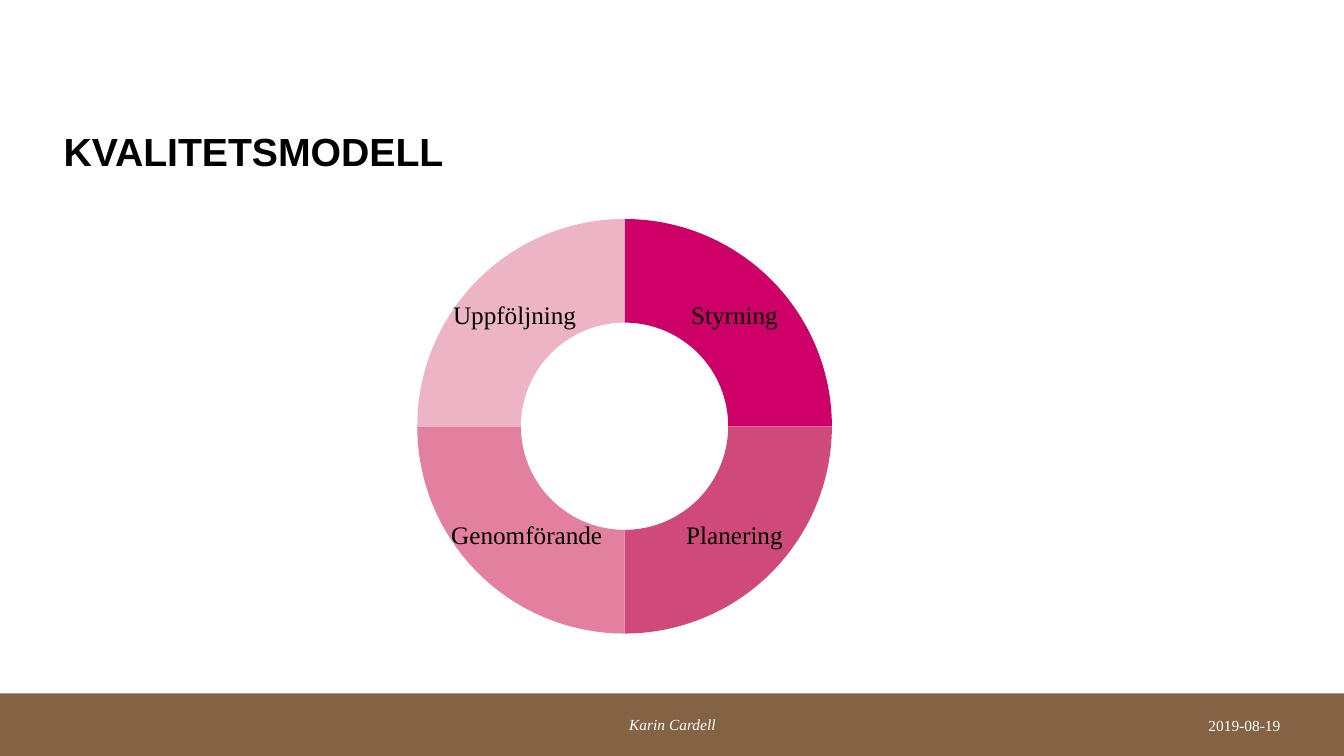
from dataclasses import dataclass

import lxml.etree
import pptx
import pptx.chart.data
import pptx.dml.color
import pptx.enum.chart
import pptx.enum.shapes
import pptx.enum.text
import pptx.oxml
import pptx.util
from pptx.util import Inches

SERIF = "Times New Roman"
CHART_NS = "http://schemas.openxmlformats.org/drawingml/2006/chart"
ALIGN = pptx.enum.text.PP_ALIGN
ANCHOR = pptx.enum.text.MSO_ANCHOR


@dataclass
class Phase:
    category: str
    label: str
    color: str
    shift: float = 0


@dataclass
class FooterText:
    text: str
    left: float
    top: float
    width: float
    height: float
    align: ALIGN
    italic: bool = False


PHASES = [
    Phase("1:a kvart", "Styrning", "CC0066"),
    Phase("2:a kvart", "Planering", "CF4A7B"),
    Phase("3:e kvart", "Genomförande", "E37F9F", 0.01),
    Phase("4:e kvart", "Uppföljning", "ECB4C4"),
]
FOOTER = [
    FooterText("Karin Cardell", 3.15, 7.06, 7.04, 0.25, ALIGN.CENTER, True),
    FooterText("2019-08-19", 11.51, 7.08, 1.19, 0.24, ALIGN.RIGHT),
]


def rgb(color: str) -> pptx.dml.color.RGBColor:
    return pptx.dml.color.RGBColor.from_string(color)


def set_font(font, name: str, size: float, color: str) -> None:
    font.name = name
    font.size = pptx.util.Pt(size)
    font.color.rgb = rgb(color)


def clear_margins(tf) -> None:
    tf.margin_left = tf.margin_top = tf.margin_right = tf.margin_bottom = 0
    tf.word_wrap = True


def layout_xml(**values):
    parts = "".join(f'<c:{tag} val="{val}"/>' for tag, val in values.items())
    return pptx.oxml.parse_xml(
        f'<c:layout xmlns:c="{CHART_NS}"><c:manualLayout>{parts}'
        "</c:manualLayout></c:layout>")


def add_title(s, text: str) -> None:
    sp = s.shapes.title
    sp.left, sp.top = Inches(0.63), Inches(0.64)
    sp.width, sp.height = Inches(12.08), Inches(1.1)
    tf = sp.text_frame
    clear_margins(tf)
    tf.vertical_anchor = ANCHOR.BOTTOM
    p = tf.paragraphs[0]
    p.text = text
    p.alignment = ALIGN.LEFT
    p.line_spacing = 0.9
    set_font(p.font, "Arial", 28, "000000")
    p.font.bold = True


def add_doughnut(s) -> None:
    data = pptx.chart.data.CategoryChartData()
    data.categories = [phase.category for phase in PHASES]
    data.add_series("Series 1", [4] * len(PHASES))
    chart = s.shapes.add_chart(
        pptx.enum.chart.XL_CHART_TYPE.DOUGHNUT, Inches(0.62), Inches(2),
        Inches(12.08), Inches(4.55), data).chart
    chart.has_legend = False
    chart.has_title = False
    set_font(chart.font, SERIF, 18, "000000")

    # Plot area and hole
    plot = chart.plots[0]
    plot.has_data_labels = False
    plot_area = plot._element.getparent()
    for old in plot_area.findall(f"{{{CHART_NS}}}layout"):
        plot_area.remove(old)
    plot_area.insert(0, layout_xml(
        layoutTarget="inner", xMode="edge", yMode="edge",
        x=0.285, y=0.038, w=0.353, h=0.904))
    for hole in plot_area.iter(f"{{{CHART_NS}}}holeSize"):
        hole.set("val", "41")

    # Ring segments with their names
    series = plot.series[0]
    series.data_labels.show_value = True
    series.data_labels.show_category_name = True
    for i, phase in enumerate(PHASES):
        point = series.points[i]
        point.format.fill.solid()
        point.format.fill.fore_color.rgb = rgb(phase.color)
        point.format.line.fill.background()
        p = point.data_label.text_frame.paragraphs[0]
        r = p.add_run()
        r.text = phase.label
        set_font(r.font, SERIF, 18, "000000")

    # Each label stands for value and category, some moved sideways
    for label in series._element.iter(f"{{{CHART_NS}}}dLbl"):
        label.find(f"{{{CHART_NS}}}showCatName").set("val", "1")
        idx = label.find(f"{{{CHART_NS}}}idx")
        shift = PHASES[int(idx.get("val"))].shift
        if shift:
            idx.addnext(layout_xml(x=shift, y=0))


def add_footer_text(s, item: FooterText) -> None:
    tf = s.shapes.add_textbox(
        Inches(item.left), Inches(item.top),
        Inches(item.width), Inches(item.height)).text_frame
    clear_margins(tf)
    tf.vertical_anchor = ANCHOR.MIDDLE
    p = tf.paragraphs[0]
    p.text = item.text
    p.alignment = item.align
    set_font(p.font, SERIF, 11, "FFFFFF")
    p.font.italic = item.italic


def main() -> None:
    prs = pptx.Presentation()
    prs.slide_width, prs.slide_height = Inches(13.33), Inches(7.5)
    s = prs.slides.add_slide(prs.slide_layouts[5])

    # Footer band
    band = s.shapes.add_shape(
        pptx.enum.shapes.MSO_SHAPE.RECTANGLE, 0, Inches(6.88),
        prs.slide_width, Inches(0.62))
    band.shadow.inherit = False
    band.fill.solid()
    band.fill.fore_color.rgb = rgb("836344")
    band.line.fill.background()

    # Content
    add_doughnut(s)
    add_title(s, "KVALITETSMODELL")
    for item in FOOTER:
        add_footer_text(s, item)
    prs.save("out.pptx")


if __name__ == "__main__":
    main()
